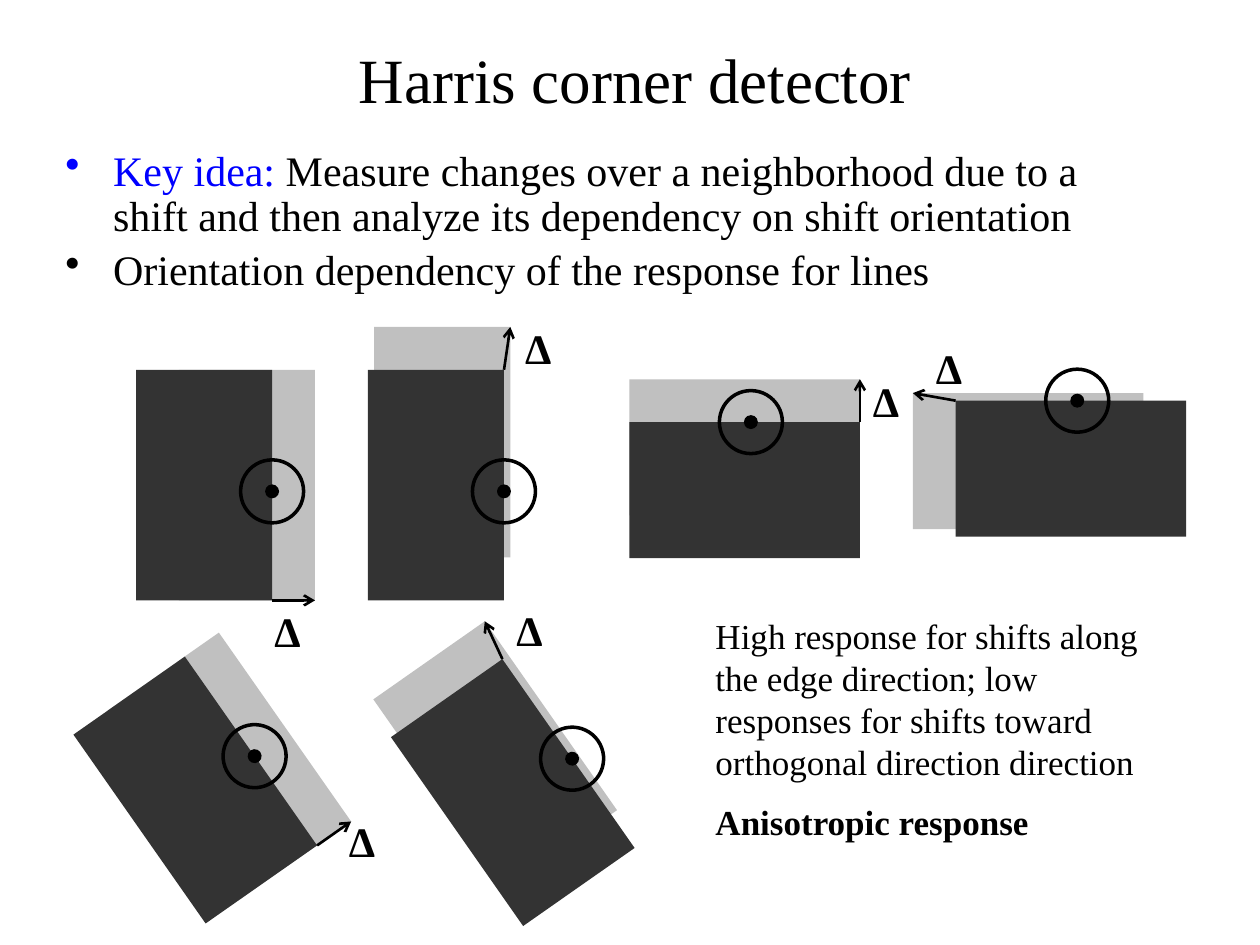
import math

import pptx
import pptx.dml.color
import pptx.enum.shapes
import pptx.enum.text
import pptx.oxml
import pptx.oxml.ns
import pptx.util

Inches, Pt = pptx.util.Inches, pptx.util.Pt
RGBColor = pptx.dml.color.RGBColor
SHAPE = pptx.enum.shapes.MSO_SHAPE
STRAIGHT = pptx.enum.shapes.MSO_CONNECTOR.STRAIGHT
ALIGN = pptx.enum.text.PP_ALIGN
ANCHOR = pptx.enum.text.MSO_ANCHOR
AUTO_SIZE = pptx.enum.text.MSO_AUTO_SIZE

BLACK = RGBColor(0x00, 0x00, 0x00)
BLUE = RGBColor(0x00, 0x00, 0xFF)
DARK = RGBColor(0x33, 0x33, 0x33)
GRAY = RGBColor(0xC0, 0xC0, 0xC0)

BLOCK_W, BLOCK_H = 1.08, 1.83
RIGHT = BLOCK_W / 2
TOP, BOTTOM = -BLOCK_H / 2, BLOCK_H / 2
DOT, RING = 0.1, 0.5
DOT_DROP = 0.05  # the dot sits a little below the middle of the right edge

# centre of the dark block, rotation, shift, end of the right edge the arrow leaves
PANELS = [
    ((1.62, 3.85), 0, (0.34, 0), BOTTOM),
    ((3.46, 3.85), 0, (0.05, -0.34), TOP),
    ((4.07, 6.29), 325, (-0.14, -0.3), TOP),
    ((1.55, 6.27), 325, (0.27, -0.19), BOTTOM),
    ((5.91, 3.89), 270, (0, -0.34), BOTTOM),
    ((8.5, 3.72), 270, (-0.34, -0.06), TOP),
]
DELTAS = [(2.08, 4.76), (4.07, 2.51), (2.67, 6.42), (4, 4.75), (6.83, 2.93), (7.33, 2.67)]


def set_all(obj, values):
    for name, value in values.items():
        setattr(obj, name, value)


def turned(centre, angle, x, y):
    """Return the slide position of block point (x, y) after rotation."""
    a = math.radians(angle)
    return (centre[0] + x * math.cos(a) - y * math.sin(a),
            centre[1] + x * math.sin(a) + y * math.cos(a))


class Deck:
    font = "Times New Roman"

    def __init__(self, prs):
        self.slide = prs.slides.add_slide(prs.slide_layouts[5])

    def run(self, p, text, size, color=BLACK, bold=False):
        r = p.add_run()
        r.text = text
        set_all(r.font, {"name": self.font, "size": Pt(size), "bold": bold})
        r.font.color.rgb = color

    def title(self, text, box, size):
        sp = self.slide.shapes.title
        set_all(sp, dict(zip(("left", "top", "width", "height"), map(Inches, box))))
        tf = sp.text_frame
        set_all(tf, {"vertical_anchor": ANCHOR.MIDDLE, "auto_size": AUTO_SIZE.NONE})
        p = tf.paragraphs[0]
        p.alignment = ALIGN.CENTER
        self.run(p, text, size)

    def text(self, paragraphs, box, size, gap=0, spacing=None, bullet=False):
        """Add a text box; each paragraph is a list of (text, format) runs."""
        tf = self.slide.shapes.add_textbox(*map(Inches, box)).text_frame
        tf.word_wrap = True
        for i, runs in enumerate(paragraphs):
            p = tf.add_paragraph() if i else tf.paragraphs[0]
            set_all(p, {"line_spacing": spacing, "space_before": Pt(gap if i else 0)})
            for text, style in runs:
                self.run(p, text, size, **style)
            if bullet:
                self.bullet(p)

    def bullet(self, p):
        pPr = p._p.get_or_add_pPr()
        pPr.set("marL", str(Inches(0.38)))
        pPr.set("indent", str(Inches(-0.38)))
        pPr.append(pptx.oxml.parse_xml(
            f'<a:buChar {pptx.oxml.ns.nsdecls("a")} char="•"/>'))

    def shape(self, group, kind, centre, size, angle, fill=None, line=None):
        w, h = size
        sp = group.shapes.add_shape(kind, Inches(centre[0] - w / 2),
                                    Inches(centre[1] - h / 2), Inches(w), Inches(h))
        sp.rotation = angle
        sp.shadow.inherit = False
        if fill is None:
            sp.fill.background()
        else:
            sp.fill.solid()
            sp.fill.fore_color.rgb = fill
        if line is None:
            sp.line.fill.background()
        else:
            sp.line.color.rgb = BLACK
            sp.line.width = Pt(line)

    def arrow(self, group, start, end):
        cn = group.shapes.add_connector(STRAIGHT, *map(Inches, (*start, *end)))
        cn.line.color.rgb = BLACK
        cn.line.width = Pt(1.5)
        ns = pptx.oxml.ns.nsdecls("a")
        cn.line._get_or_add_ln().append(
            pptx.oxml.parse_xml(f'<a:tailEnd {ns} type="arrow"/>'))
        cn._element.spPr.append(pptx.oxml.parse_xml(f"<a:effectLst {ns}/>"))

    def panel(self, centre, angle, shift, edge_end):
        """Draw a block, its shifted ghost, the marked edge point and the shift arrow."""
        group = self.slide.shapes.add_group_shape()
        ghost = (centre[0] + shift[0], centre[1] + shift[1])
        for place, fill in ((ghost, GRAY), (centre, DARK)):
            self.shape(group, SHAPE.RECTANGLE, place, (BLOCK_W, BLOCK_H), angle, fill)
        point = turned(centre, angle, RIGHT, DOT_DROP)
        self.shape(group, SHAPE.OVAL, point, (DOT, DOT), angle, BLACK, 0.75)
        self.shape(group, SHAPE.OVAL, point, (RING, RING), angle, line=2)
        corner = turned(centre, angle, RIGHT, edge_end)
        self.arrow(group, corner, (corner[0] + shift[0], corner[1] + shift[1]))


def main():
    prs = pptx.Presentation()
    set_all(prs, {"slide_width": Inches(10), "slide_height": Inches(7.5)})
    deck = Deck(prs)
    deck.title("Harris corner detector", (0.64, 0.19, 8.8, 0.86), 36)
    deck.text([
        [("Key idea:", {"color": BLUE}),
         (" Measure changes over a neighborhood due to a shift and then analyze "
          "its dependency on shift orientation", {})],
        [("Orientation dependency of the response for lines", {})],
    ], (0.42, 1.14, 8.83, 5.76), 24, gap=4.8, spacing=0.9, bullet=True)
    deck.text([
        [("High response for shifts along the edge direction; low responses for "
          "shifts toward orthogonal direction direction", {})],
        [("Anisotropic response", {"bold": True})],
    ], (5.58, 4.83, 3.75, 1.93), 20, gap=10)
    for left, top in DELTAS:
        deck.text([[("Δ", {"bold": True})]], (left, top, 0.42, 0.5), 24)
    for panel in PANELS:
        deck.panel(*panel)
    prs.save("out.pptx")


if __name__ == "__main__":
    main()
